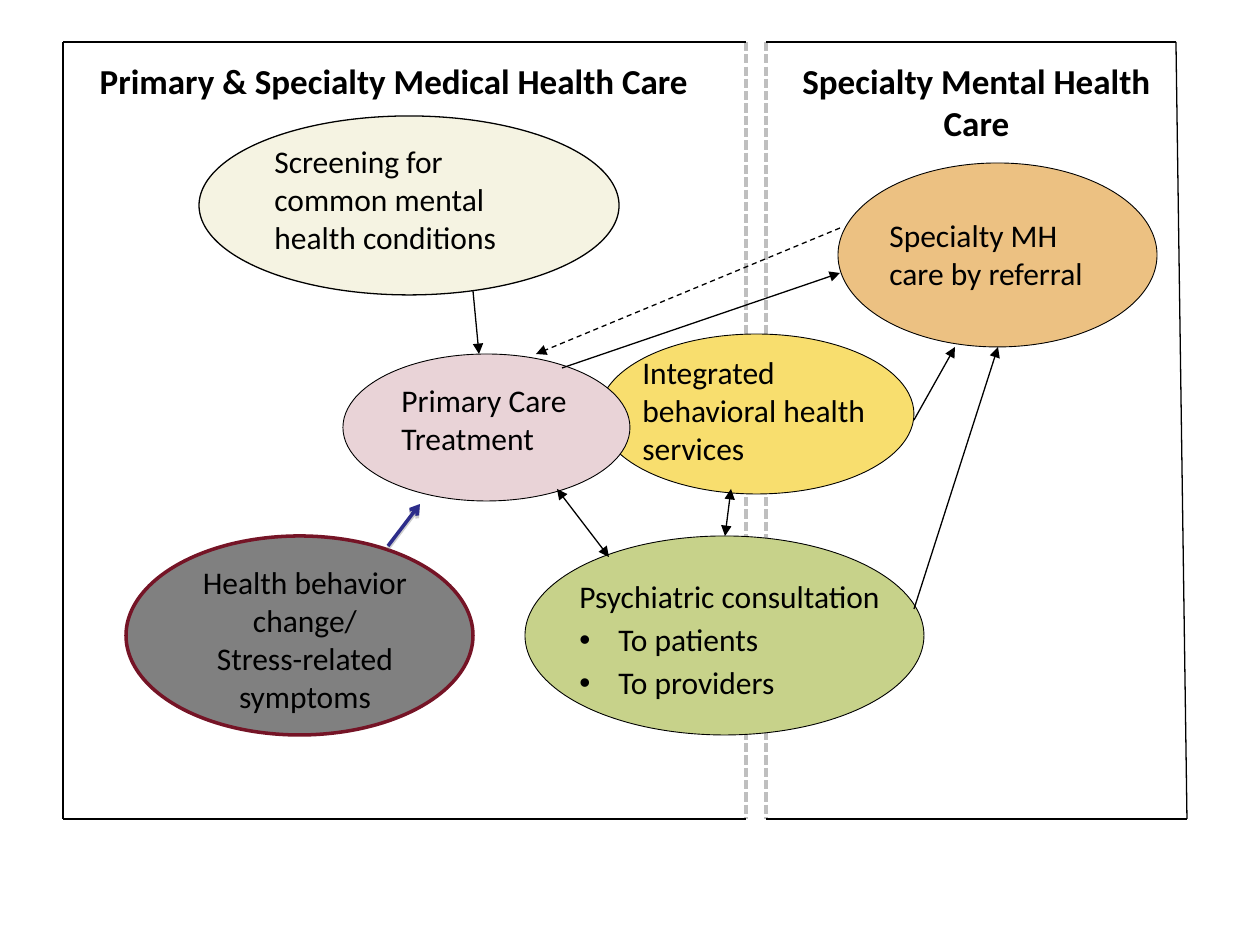
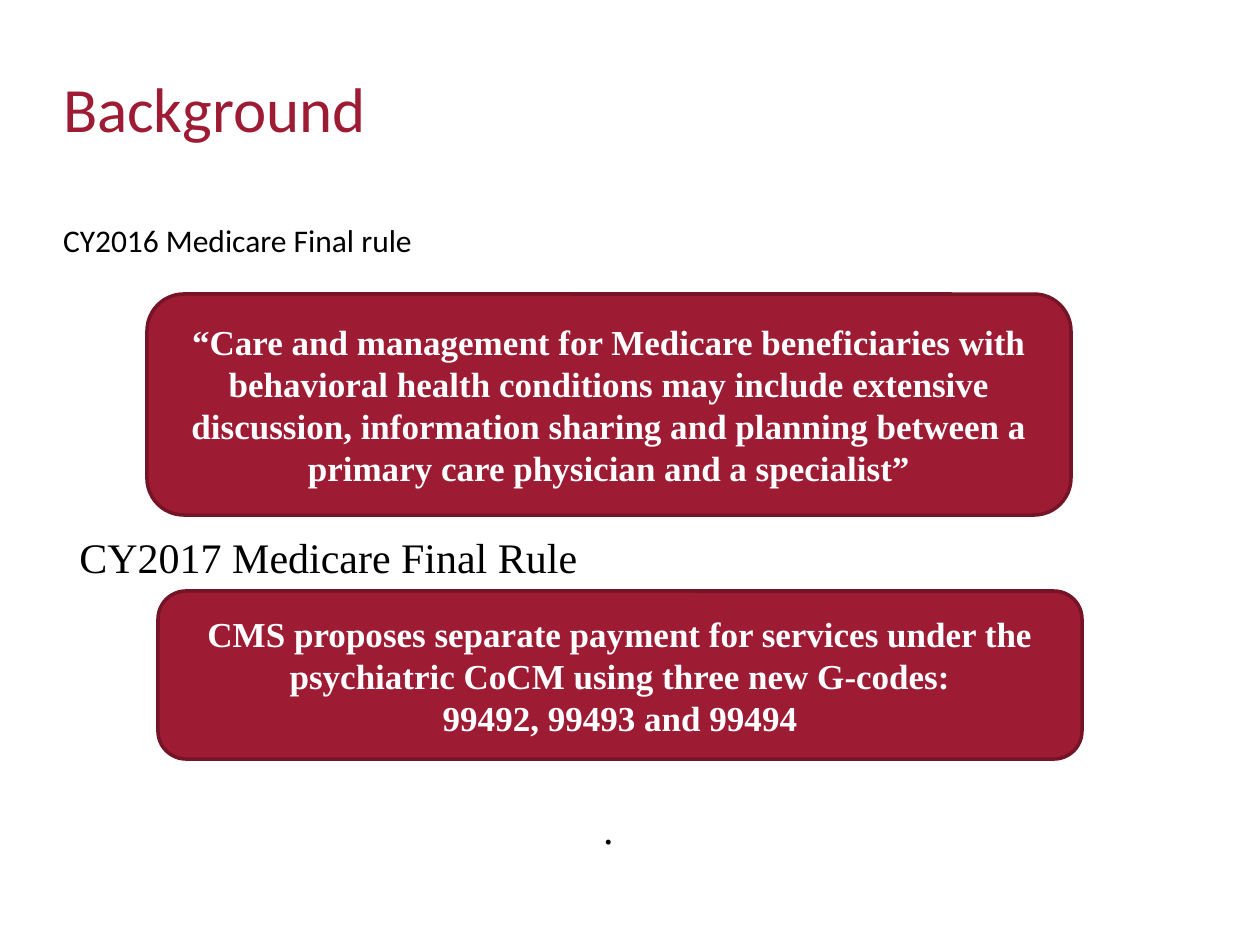
from dataclasses import dataclass

from lxml.etree import SubElement
from pptx import Presentation
from pptx.dml.color import RGBColor as Rgb
from pptx.enum.dml import MSO_LINE as Dash
from pptx.enum.shapes import MSO_CONNECTOR as Conn, MSO_SHAPE as Geo
from pptx.enum.text import MSO_ANCHOR as Anchor, MSO_AUTO_SIZE as Fit, PP_ALIGN as Align
from pptx.oxml.ns import qn
from pptx.util import Pt


@dataclass(frozen=True)
class Theme:
    # Colours
    black: str = "000000"
    white: str = "FFFFFF"
    red: str = "9E1B34"
    wine: str = "751426"
    grey: str = "808080"
    pale: str = "BFBFBF"
    navy: str = "2D2D8A"
    gold: str = "F8DE6E"
    rose: str = "E9D3D7"
    green: str = "C7D28A"
    tan: str = "ECC182"
    cream: str = "F5F3E2"
    # Fonts and type sizes
    sans: str = "Calibri"
    serif: str = "Times New Roman"
    title: int = 36
    large: int = 24
    head: int = 20
    body: int = 18
    # Line widths
    hair: float = 0.5
    thin: float = 0.75
    rule: float = 1.75
    bold: int = 2


T = Theme()
SCALE = 914400 / 126

LABEL = dict(name=T.sans, size=T.body, color=T.black)
HEAD = dict(name=T.sans, size=T.head, color=T.black, bold=True)
TITLE = dict(name=T.sans, size=T.title, color=T.red)
NOTE = dict(name=T.serif, size=T.large, color=T.black)
QUOTE = dict(name=T.serif, size=T.head, color=T.white, bold=True)


# Basic helpers
def px(*nums):
    return [round(n * SCALE) for n in nums]


def apply(obj, **vals):
    for key, val in vals.items():
        setattr(obj, key, val)


def node(up, tag, **atts):
    return SubElement(up, qn(tag), {k: str(v) for k, v in atts.items()})


def style(font, color, size, **rest):
    apply(font, size=Pt(size), **rest)
    font.color.rgb = Rgb.from_string(color)


def stroke(line, color, width):
    line.color.rgb = Rgb.from_string(color)
    line.width = Pt(width)


# Text: one paragraph for each line; a leading "• " makes a bullet
def write(frame, lines, look, align=Align.LEFT, gap=0):
    for i, line in enumerate(lines):
        para = frame.paragraphs[0] if i == 0 else frame.add_paragraph()
        apply(para, alignment=align, space_before=Pt(gap if i else 0))
        if line.startswith("• "):
            line = line[2:]
            dent = px(39)[0]
            props = para._p.get_or_add_pPr()
            apply_xml = {"marL": dent, "indent": -dent}
            for key, val in apply_xml.items():
                props.set(key, str(val))
            node(props, "a:buFont", typeface="Arial")
            node(props, "a:buChar", char="•")
        run = para.add_run()
        run.text = line
        style(run.font, **look)


def label(slide, box, lines, look=LABEL, align=Align.LEFT, gap=0):
    frame = slide.shapes.add_textbox(*px(*box)).text_frame
    frame.word_wrap = True
    write(frame, lines, look, align, gap)


def holder(shape, box, text, look, anchor):
    apply(shape, **dict(zip(("left", "top", "width", "height"), px(*box))))
    frame = shape.text_frame
    apply(frame, margin_left=0, margin_top=0, margin_right=0, margin_bottom=0,
          vertical_anchor=anchor, auto_size=Fit.NONE, word_wrap=True)
    write(frame, [text], look)
    props = frame.paragraphs[0]._p.get_or_add_pPr()
    for key in ("marL", "indent"):
        props.set(key, "0")
    node(props, "a:buNone")


# Filled shapes
def solid(slide, kind, box, fill, edge=T.black, width=T.hair):
    shape = slide.shapes.add_shape(kind, *px(*box))
    shape.shadow.inherit = False
    shape.fill.solid()
    shape.fill.fore_color.rgb = Rgb.from_string(fill)
    stroke(shape.line, edge, width)
    return shape


def panel(slide, box, lines):
    shape = solid(slide, Geo.ROUNDED_RECTANGLE, box, T.red, T.wine, T.bold)
    apply(shape.text_frame, word_wrap=True, vertical_anchor=Anchor.MIDDLE)
    write(shape.text_frame, lines, QUOTE, Align.CENTER)


# Lines and arrows
def link(slide, ends, color=T.black, width=T.thin, dash=None, head=None, tail=None):
    line = slide.shapes.add_connector(Conn.STRAIGHT, *px(*ends))
    stroke(line.line, color, width)
    if dash:
        line.line.dash_style = dash
    edge = line.line._get_or_add_ln()
    for tag, tip in (("a:headEnd", head), ("a:tailEnd", tail)):
        if tip:
            node(edge, tag, type=tip)
    return node(line._element.spPr, "a:effectLst")


def arrow(slide, ends, tip="triangle", **opts):
    return link(slide, ends, tail=tip, **opts)


def shade(effect):
    cast = node(effect, "a:outerShdw", blurRad=0, dist=Pt(1.6), dir=5400000, rotWithShape=0)
    tint = node(cast, "a:srgbClr", val=T.grey)
    node(tint, "a:alpha", val=38000)


# Slide 1: care model
def model(slide):
    top, base = 42, 819
    left, mid, gate, right, foot = 63, 746, 766, 1176, 1187

    # Dashed divide
    for x in (gate, mid):
        link(slide, (x, top, x, base), T.pale, T.rule, Dash.SQUARE_DOT)

    # Care ovals
    for box, fill, *edge in (
        ((599, 334, 315, 160), T.gold),
        ((343, 354, 287, 147), T.rose),
        ((525, 536, 399, 199), T.green),
        ((838, 163, 319, 184), T.tan),
        ((199, 116, 420, 179), T.cream, T.black, T.thin),
        ((126, 536, 347, 199), T.grey, T.wine, T.bold),
    ):
        solid(slide, Geo.OVAL, box, fill, *edge)

    # Frames of the two care fields
    for ends in (
        (left, top, mid, top), (left, top, left, base), (left, base, mid, base),
        (gate, top, right, top), (gate, base, foot, base), (right, top, foot, base),
    ):
        link(slide, ends)

    # Headings
    for box, text in (
        ((63, 53, 662, 55), "Primary & Specialty Medical Health Care"),
        ((777, 53, 399, 97), "Specialty Mental Health Care"),
    ):
        label(slide, box, [text], HEAD, Align.CENTER)

    # Oval labels
    for box, text in (
        ((262, 136, 273, 127), "Screening for common mental health conditions"),
        ((389, 375, 209, 88), "Primary Care Treatment"),
        ((630, 347, 263, 127), "Integrated behavioral health services"),
        ((877, 210, 242, 88), "Specialty MH care by referral"),
    ):
        label(slide, box, [text])
    label(slide, (567, 571, 378, 137),
          ["Psychiatric consultation", "• To patients", "• To providers"], gap=3)
    label(slide, (179, 557, 252, 164),
          ["Health behavior change/", "Stress-related symptoms"], align=Align.CENTER)

    # Paths of care
    for ends in ((609, 557, 557, 489), (731, 489, 725, 536)):
        arrow(slide, ends, head="triangle")
    for ends in (
        (473, 291, 479, 354), (562, 368, 840, 273),
        (914, 420, 955, 347), (914, 609, 998, 347),
    ):
        arrow(slide, ends)
    arrow(slide, (840, 228, 536, 354), dash=Dash.DASH)
    shade(arrow(slide, (388, 546, 420, 504), "arrow", color=T.navy, width=T.bold))


# Slide 2: background
def rules(slide):
    title, body = slide.placeholders
    holder(title, (63, 57, 1134, 101), "Background", TITLE, Anchor.MIDDLE)
    holder(body, (63, 221, 1134, 63), "CY2016 Medicare Final rule", LABEL, Anchor.TOP)
    panel(slide, (147, 294, 924, 221), [
        "“Care and management for Medicare beneficiaries with behavioral health "
        "conditions may include extensive discussion, information sharing and "
        "planning between a primary care physician and a specialist”"])
    label(slide, (67, 525, 630, 63), ["CY2017 Medicare Final Rule"], NOTE)
    panel(slide, (158, 591, 924, 168), [
        "CMS proposes separate payment for services under the psychiatric CoCM "
        "using three new G-codes:",
        "99492, 99493 and 99494"])
    label(slide, (122, 796, 973, 63), ["."], NOTE, Align.CENTER)


def main():
    deck = Presentation()
    deck.slide_width, deck.slide_height = px(1260, 945)
    for layout, build in ((6, model), (1, rules)):
        build(deck.slides.add_slide(deck.slide_layouts[layout]))
    deck.save("out.pptx")


if __name__ == "__main__":
    main()
